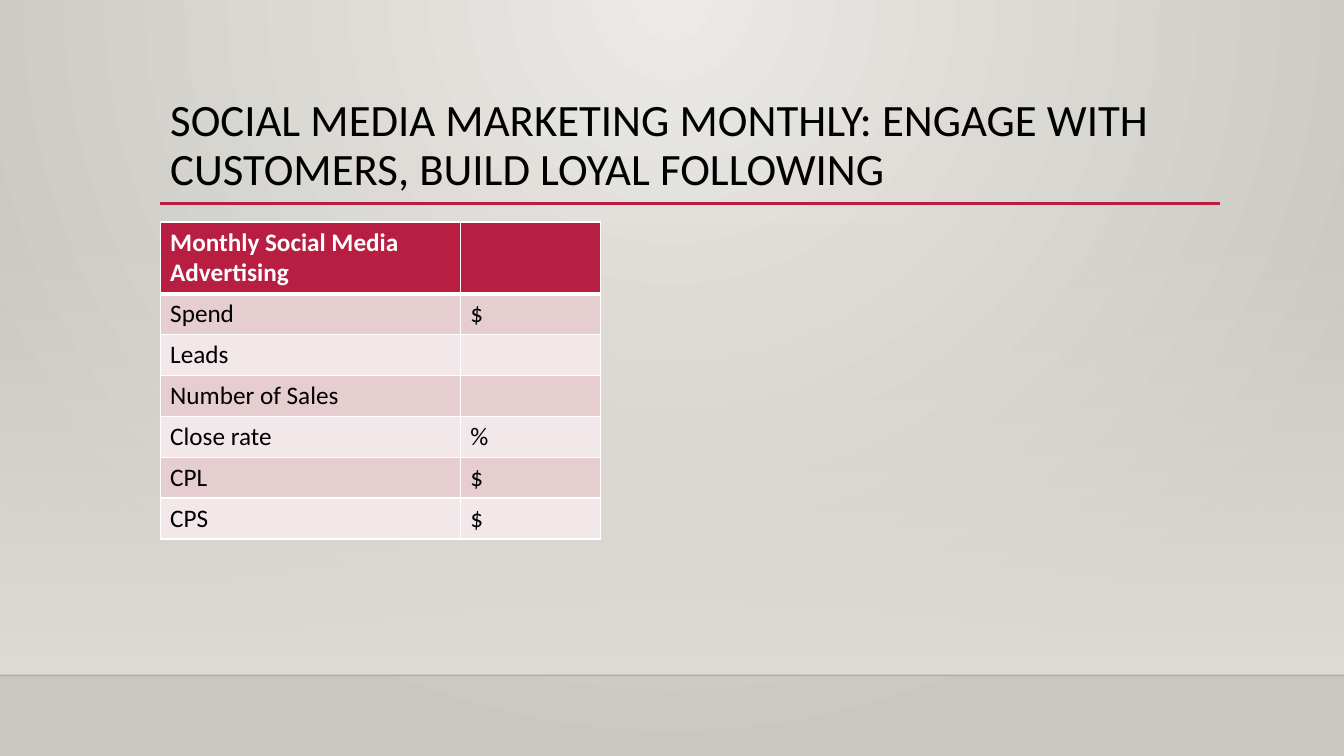
from lxml import etree
from pptx import Presentation
from pptx.dml.color import RGBColor
from pptx.enum.shapes import MSO_CONNECTOR, MSO_SHAPE
from pptx.enum.text import MSO_ANCHOR, MSO_AUTO_SIZE, PP_ALIGN
from pptx.oxml.ns import qn
from pptx.util import Pt

STRAIGHT = MSO_CONNECTOR.STRAIGHT
RECTANGLE = MSO_SHAPE.RECTANGLE
MIDDLE = MSO_ANCHOR.MIDDLE
NO_AUTOFIT = MSO_AUTO_SIZE.NONE
LEFT = PP_ALIGN.LEFT

FONT = "Calibri"
CRIMSON, WHITE, BLACK = "B71E42", "FFFFFF", "000000"
ROW_FILLS = ("E6CDCF", "F3E8E9")
WIDTH, HEIGHT = 960, 540
FLOOR_TOP = 482.4

METRICS = [
    ("Monthly Social Media Advertising", ""),
    ("Spend", "$"),
    ("Leads", ""),
    ("Number of Sales", ""),
    ("Close rate", "%"),
    ("CPL", "$"),
    ("CPS", "$"),
]


def color(value):
    return RGBColor.from_string(value)


def write_text(text_frame, text, size=18, fill=BLACK, bold=False, spacing=None):
    paragraph = text_frame.paragraphs[0]
    paragraph.alignment = LEFT
    paragraph.line_spacing = spacing
    font = paragraph.font
    if text:
        run = paragraph.add_run()
        run.text = text
        font = run.font
    font.name, font.size, font.bold = FONT, Pt(size), bold
    font.color.rgb = color(fill)


def set_gradient(fill, start, end):
    fill.gradient()
    for stop, value in zip(fill.gradient_stops, (start, end)):
        stop.color.rgb = color(value)


def set_alpha(element, percent):
    """Set the opacity of the first colour inside the element."""
    first_color = next(element.iter(qn("a:srgbClr")))
    etree.SubElement(first_color, qn("a:alpha"), val=str(percent * 1000))


def add_rule(slide, left, top, width, stroke, weight):
    rule = slide.shapes.add_connector(
        STRAIGHT, Pt(left), Pt(top), Pt(left + width), Pt(top))
    rule.line.color.rgb = color(stroke)
    rule.line.width = Pt(weight)
    etree.SubElement(rule.element.spPr, qn("a:effectLst"))
    return rule


def add_backdrop(slide):
    # Radial glow from the top centre
    set_gradient(slide.background.fill, "ECEAE7", "CAC7C1")
    gradient = next(slide.element.iter(qn("a:gradFill")))
    linear = gradient.find(qn("a:lin"))
    radial = etree.Element(qn("a:path"), path="circle")
    etree.SubElement(radial, qn("a:fillToRect"),
                     l="43000", t="0", r="43000", b="100000")
    gradient.replace(linear, radial)

    # Wall fading in towards the floor
    wall_top = 159.12
    wall = slide.shapes.add_shape(
        RECTANGLE, 0, Pt(wall_top), Pt(WIDTH), Pt(FLOOR_TOP - wall_top))
    wall.shadow.inherit = False
    wall.line.fill.background()
    set_gradient(wall.fill, "DFDBD5", "DFDBD5")
    wall.fill.gradient_angle = 270
    set_alpha(wall.element.spPr, 0)

    # Floor edge
    edge = add_rule(slide, 0, FLOOR_TOP, WIDTH, "000001", 1)
    set_alpha(edge.element.spPr, 20)


def add_title(slide, text, left, top, width, height):
    title = slide.shapes.title
    title.left, title.top = Pt(left), Pt(top)
    title.width, title.height = Pt(width), Pt(height)
    frame = title.text_frame
    frame.word_wrap = True
    frame.auto_size = NO_AUTOFIT
    frame.vertical_anchor = MIDDLE
    write_text(frame, text, size=32, spacing=0.9)
    add_rule(slide, left, top + height - 0.5, width + 0.7, CRIMSON, 2.5)


def set_borders(cell, **weights):
    properties = cell._tc.get_or_add_tcPr()
    for side in "LRTB":
        line = etree.SubElement(properties, qn("a:ln" + side),
                                w=str(Pt(weights.get(side, 1))))
        solid = etree.SubElement(line, qn("a:solidFill"))
        etree.SubElement(solid, qn("a:srgbClr"), val=WHITE)


def add_metrics_table(slide, rows, left, top, column_widths, header_height, row_height):
    height = header_height + row_height * (len(rows) - 1)
    table = slide.shapes.add_table(
        len(rows), len(column_widths), Pt(left), Pt(top),
        Pt(sum(column_widths)), Pt(height)).table
    for column, width in zip(table.columns, column_widths):
        column.width = Pt(width)
    for index, values in enumerate(rows):
        header = index == 0
        table.rows[index].height = Pt(header_height if header else row_height)
        for cell, text in zip(table.rows[index].cells, values):
            # Heavier line between the header and the first row
            set_borders(cell, B=3 if header else 1, T=3 if index == 1 else 1)
            cell.fill.solid()
            cell.fill.fore_color.rgb = color(
                CRIMSON if header else ROW_FILLS[(index - 1) % 2])
            write_text(cell.text_frame, text, bold=header,
                       fill=WHITE if header else BLACK)


def main():
    presentation = Presentation()
    presentation.slide_width, presentation.slide_height = Pt(WIDTH), Pt(HEIGHT)
    slide = presentation.slides.add_slide(presentation.slide_layouts[5])
    add_backdrop(slide)
    add_title(
        slide,
        "SOCIAL MEDIA MARKETING MONTHLY: ENGAGE WITH CUSTOMERS, BUILD LOYAL FOLLOWING",
        left=114.4, top=63.2, width=756, height=82.6)
    add_metrics_table(slide, METRICS, left=114.4, top=158.6,
                      column_widths=(214.4, 100), header_height=51.1, row_height=29.2)
    presentation.save("out.pptx")


if __name__ == "__main__":
    main()
